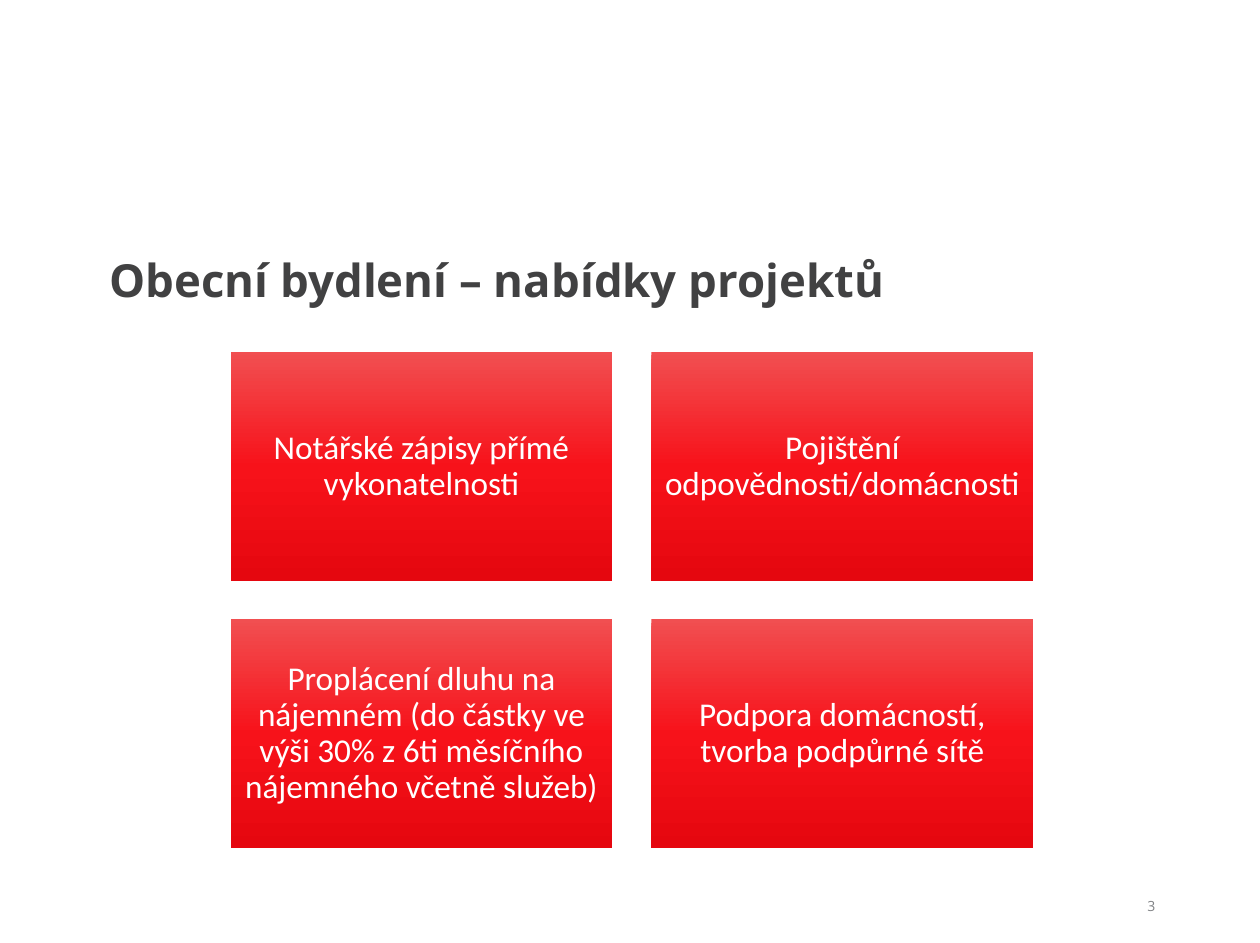
from copy import deepcopy
from dataclasses import dataclass

from pptx import Presentation
from pptx.dml.color import RGBColor
from pptx.enum.shapes import MSO_SHAPE as Shape
from pptx.enum.text import MSO_ANCHOR as Anchor, PP_ALIGN as Align
from pptx.oxml.ns import qn
from pptx.util import Inches, Pt

WHITE = RGBColor(0xFF, 0xFF, 0xFF)
DARK = RGBColor(0x41, 0x41, 0x42)
GRAY = RGBColor(0x80, 0x82, 0x85)
REDS = (
    RGBColor(0xF1, 0x4F, 0x51),
    RGBColor(0xF7, 0x12, 0x1A),
    RGBColor(0xE5, 0x07, 0x0F),
)

MM_PER_INCH = 25.4
PAGE_WIDTH, PAGE_HEIGHT = 254 / MM_PER_INCH, 190 / MM_PER_INCH
LEFT, TOP = 1.83, 2.79
WIDTH, HEIGHT = 3.03, 1.82
GAP_X, GAP_Y = 0.31, 0.3
COLS = 2
OFFERS = (
    "Notářské zápisy přímé vykonatelnosti",
    "Pojištění odpovědnosti/domácnosti",
    "Proplácení dluhu na nájemném (do částky ve výši 30% z 6ti měsíčního nájemného včetně služeb)",
    "Podpora domácností, tvorba podpůrné sítě",
)


@dataclass(frozen=True)
class Box:
    left: float
    top: float
    width: float
    height: float

    def lengths(self) -> tuple:
        return tuple(map(Inches, (self.left, self.top, self.width, self.height)))


@dataclass(frozen=True)
class Style:
    font: str
    size: int
    color: RGBColor
    bold: bool = False
    align: Align = Align.LEFT
    anchor: Anchor = Anchor.BOTTOM
    inset: float = 0
    spacing: float = 1.0


TITLE = Style("Open Sans", 26, DARK, bold=True)
NUMBER = Style("Open Sans", 8, GRAY, align=Align.RIGHT)
OFFER = Style("Calibri", 19, WHITE, align=Align.CENTER, anchor=Anchor.MIDDLE,
              inset=0.08, spacing=0.9)


def set_text(shape, text: str, style: Style) -> None:
    frame = shape.text_frame
    frame.text = text
    frame.word_wrap = True
    frame.vertical_anchor = style.anchor
    frame.margin_left = frame.margin_right = Inches(style.inset)
    frame.margin_top = frame.margin_bottom = Inches(style.inset)
    line = frame.paragraphs[0]
    line.alignment = style.align
    line.line_spacing = style.spacing
    font = line.runs[0].font
    font.name = style.font
    font.size = Pt(style.size)
    font.bold = style.bold
    font.color.rgb = style.color


def add_label(slide, box: Box, text: str, style: Style) -> None:
    set_text(slide.shapes.add_textbox(*box.lengths()), text, style)


def add_offer(slide, box: Box, text: str) -> None:
    tile = slide.shapes.add_shape(Shape.RECTANGLE, *box.lengths())
    tile.shadow.inherit = False
    tile.line.fill.background()
    fill = tile.fill
    fill.gradient()
    fill.gradient_angle = 270
    stops = tile._element.spPr.find(qn("a:gradFill")).find(qn("a:gsLst"))
    stops.append(deepcopy(stops[-1]))
    for index, (stop, color) in enumerate(zip(fill.gradient_stops, REDS)):
        stop.position = index / (len(REDS) - 1)
        stop.color.rgb = color
    set_text(tile, text, OFFER)


def main() -> None:
    deck = Presentation()
    deck.slide_width = Inches(PAGE_WIDTH)
    deck.slide_height = Inches(PAGE_HEIGHT)
    slide = deck.slides.add_slide(deck.slide_layouts[6])
    add_label(slide, Box(0.87, 0.98, 8.31, 1.45),
              "Obecní bydlení – nabídky projektů", TITLE)
    for index, text in enumerate(OFFERS):
        row, col = divmod(index, COLS)
        box = Box(LEFT + col * (WIDTH + GAP_X), TOP + row * (HEIGHT + GAP_Y),
                  WIDTH, HEIGHT)
        add_offer(slide, box, text)
    add_label(slide, Box(8.61, 6.85, 0.56, 0.4), "3", NUMBER)
    deck.save("out.pptx")


if __name__ == "__main__":
    main()
